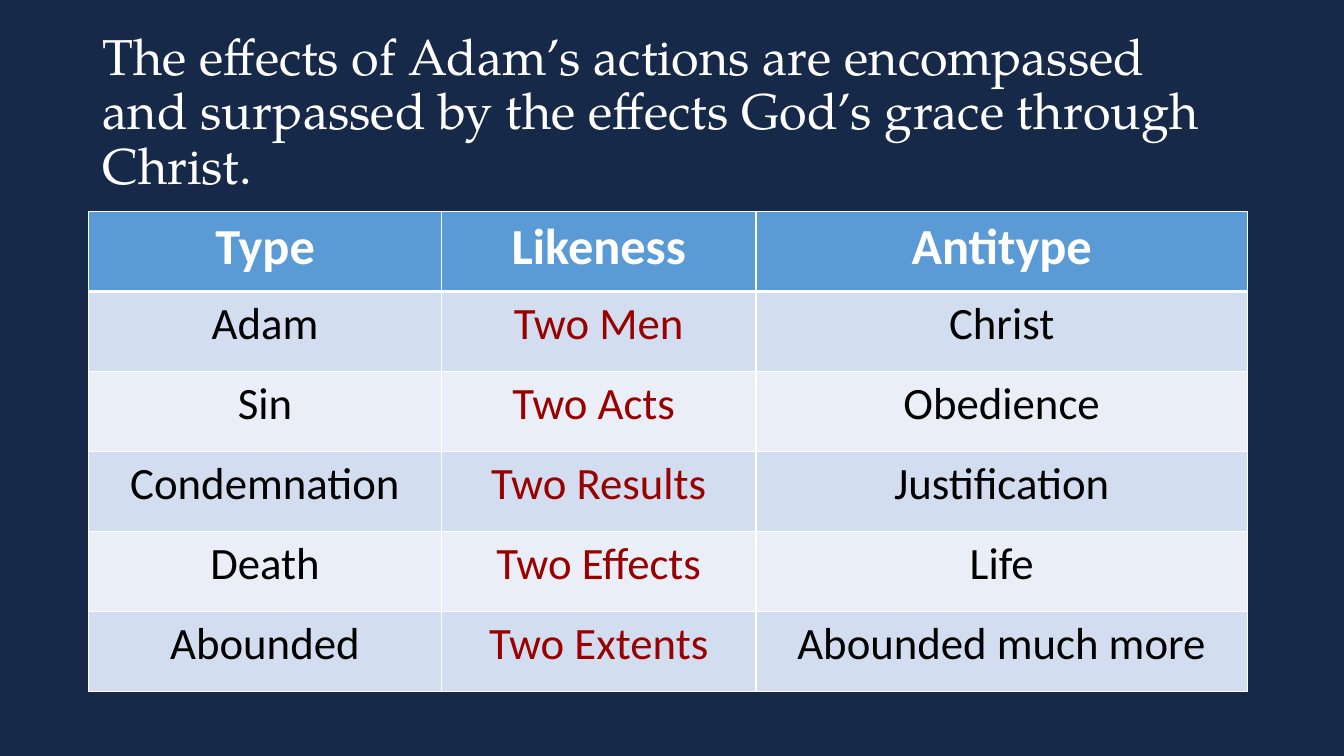
from lxml import etree
from pptx import Presentation
from pptx import util as u
from pptx.dml.color import RGBColor
from pptx.enum import text
from pptx.oxml import ns

HUES = {"back": "172949", "white": "FFFFFF", "head": "5B9BD5", "odd": "D2DEEF",
        "even": "EAEFF7", "black": "000000", "red": "990000"}
ROWS = [
    ("Type", "Likeness", "Antitype"),
    ("Adam", "Two Men", "Christ"),
    ("Sin", "Two Acts ", "Obedience"),
    ("Condemnation", "Two Results", "Justification"),
    ("Death", "Two Effects", "Life"),
    ("Abounded", "Two Extents", "Abounded much more"),
]
WIDTHS = (8.9, 7.92, 12.39)


def tint(name):
    return RGBColor.from_string(HUES[name])


def style(font, hue, **form):
    for key, value in form.items():
        setattr(font, key, value)
    font.color.rgb = tint(hue)


def edge(cell, side, width):
    line = etree.SubElement(cell._tc.get_or_add_tcPr(), ns.qn("a:" + side),
                            w=str(u.Pt(width)))
    fill = etree.SubElement(line, ns.qn("a:solidFill"))
    etree.SubElement(fill, ns.qn("a:srgbClr"), val=HUES["white"])


# Title above the table
def add_title(slide, box, words):
    title = slide.shapes.title
    for key, value in zip(("left", "top", "width", "height"), box):
        setattr(title, key, u.Cm(value))
    frame = title.text_frame
    form = {"text": words, "word_wrap": True, "auto_size": text.MSO_AUTO_SIZE.NONE,
            "vertical_anchor": text.MSO_ANCHOR.MIDDLE}
    for key, value in form.items():
        setattr(frame, key, value)
    para = frame.paragraphs[0]
    para.alignment = text.PP_ALIGN.LEFT
    para.line_spacing = 0.9
    style(para.runs[0].font, "white", name="TeX Gyre Pagella", size=u.Pt(36))


# One table cell: borders come before the fill
def fill_cell(cell, words, row, col):
    for side in ("lnL", "lnR", "lnT", "lnB"):
        thick = (row, side) in ((0, "lnB"), (1, "lnT"))
        edge(cell, side, 3 if thick else 1)
    cell.fill.solid()
    cell.fill.fore_color.rgb = tint("head" if row == 0 else "odd" if row % 2 else "even")
    cell.text = words
    para = cell.text_frame.paragraphs[0]
    para.alignment = text.PP_ALIGN.CENTER
    hue = "white" if row == 0 else "red" if col == 1 else "black"
    style(para.runs[0].font, hue, name="Calibri", size=u.Pt(32 if row else 36),
          bold=row == 0)


# Comparison table
def add_grid(slide, box):
    grid = slide.shapes.add_table(len(ROWS), len(WIDTHS), *map(u.Cm, box)).table
    for col, width in zip(grid.columns, WIDTHS):
        col.width = u.Cm(width)
    for row, line in enumerate(ROWS):
        for col, words in enumerate(line):
            fill_cell(grid.cell(row, col), words, row, col)


def main():
    deck = Presentation()
    deck.slide_width, deck.slide_height = u.Cm(33.87), u.Cm(19.05)
    slide = deck.slides.add_slide(deck.slide_layouts[5])
    slide.background.fill.solid()
    slide.background.fill.fore_color.rgb = tint("back")
    add_title(slide, (2.33, 1.02, 29.21, 3.68),
              "The effects of Adam’s actions are encompassed and surpassed "
              "by the effects God’s grace through Christ.")
    add_grid(slide, (2.23, 5.33, 29.21, 12.09))
    deck.save("out.pptx")


if __name__ == "__main__":
    main()
